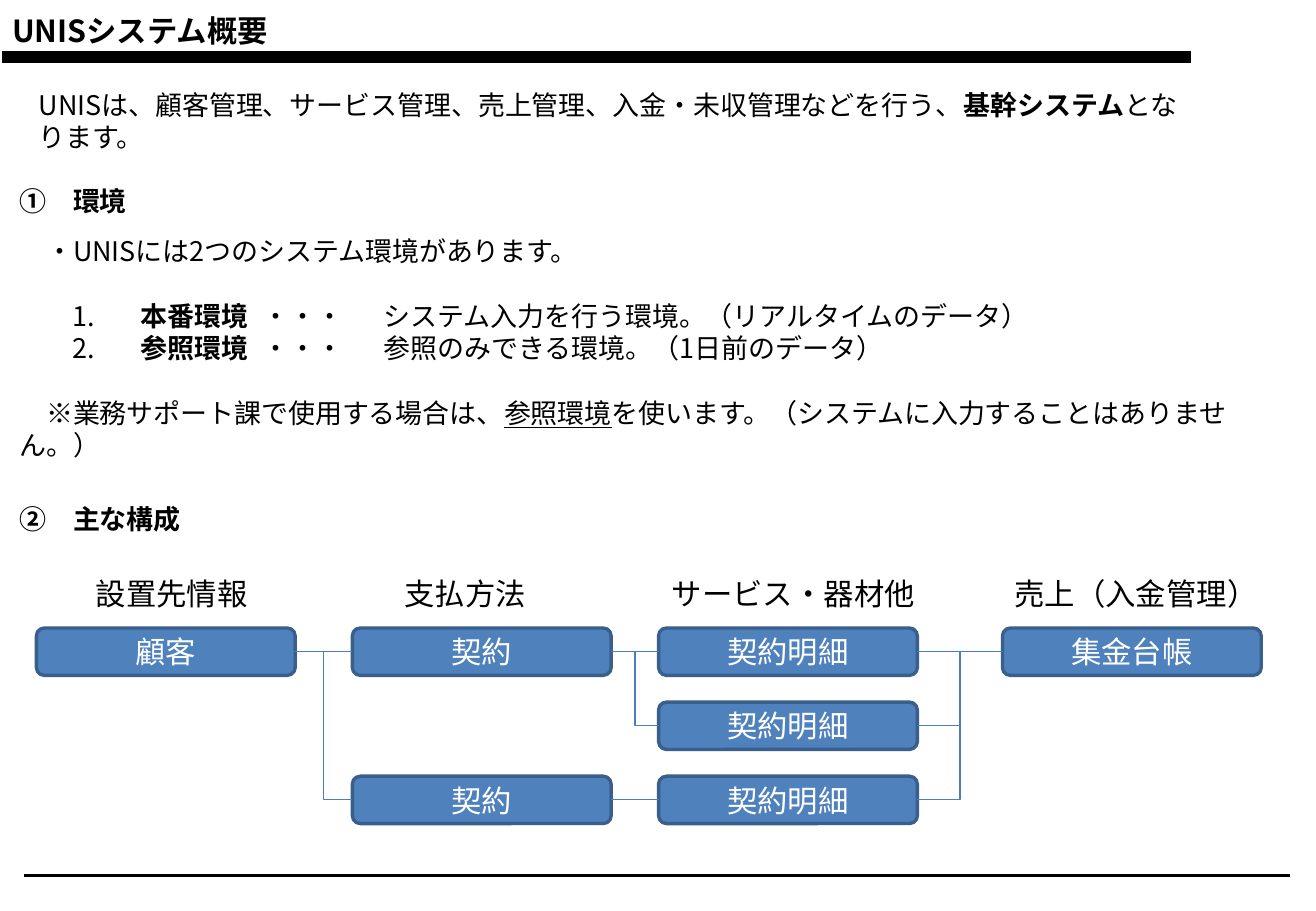
from lxml import etree
from pptx import Presentation
from pptx.dml.color import RGBColor
from pptx.enum.shapes import MSO_CONNECTOR as CONNECTOR, MSO_SHAPE as SHAPE
from pptx.enum.text import MSO_ANCHOR as ANCHOR, MSO_AUTO_SIZE as AUTO_SIZE, PP_ALIGN as ALIGN
from pptx.oxml.ns import qn
from pptx.util import Pt

COLORS = {"text": "000000", "white": "FFFFFF", "box": "4F81BD",
          "border": "3A5F8C", "link": "4B7EBC"}
SANS, LATIN = "Noto Sans CJK JP", "Calibri"
PX = 9144  # 100 px to the inch
BOLD, UNDERLINE = {"bold": True}, {"underline": True}

TITLE = "UNISシステム概要"
INTRO = [("UNISは、顧客管理、サービス管理、売上管理、入金・未収管理などを行う、", {}),
         ("基幹システム", BOLD), ("となります。", {})]
SECTIONS = [("①　環境", 147), ("②　主な構成", 409)]

# first-line indent in px, blank lines before, runs
ENVIRONMENT = [
    (22, 0, [("・UNISには2つのシステム環境があります。", {})]),
    (44, 1, [("1.\t", {}), ("本番環境", BOLD),
             ("\t・・・\tシステム入力を行う環境。（リアルタイムのデータ）", {})]),
    (44, 0, [("2.\t", {}), ("参照環境", BOLD),
             ("\t・・・\t参照のみできる環境。（1日前のデータ）", {})]),
    (22, 1, [("※業務サポート課で使用する場合は、", {}), ("参照環境", UNDERLINE),
             ("を使います。（システムに入力することはありません。）", {})]),
]
TAB_STOPS = [95, 228, 316]

# heading, heading left, boxes left, {row: box label}
COLUMNS = [
    ("設置先情報", 69, 30, {0: "顧客"}),
    ("支払方法", 323, 290, {0: "契約", 2: "契約"}),
    ("サービス・器材他", 543, 542, {0: "契約明細", 1: "契約明細", 2: "契約明細"}),
    ("売上（入金管理）", 825, 825, {0: "集金台帳"}),
]
# (column, row) of both ends
LINKS = [((0, 0), (1, 0)), ((0, 0), (1, 2)), ((1, 0), (2, 0)), ((1, 0), (2, 1)),
         ((1, 2), (2, 2)), ((2, 0), (3, 0)), ((2, 1), (3, 0)), ((2, 2), (3, 0))]
RULES = [(2, 980, 47, 6.7), (20, 1062, 721, 2)]  # left, right, top, weight

BOX_WIDTH, BOX_HEIGHT, FIRST_ROW, ROW_STEP = 213, 39, 517, 61


def rgb(name):
    return RGBColor.from_string(COLORS[name])


def px(*lengths):
    return [length * PX for length in lengths]


def write(paragraph, runs, size, color="text", font=SANS, align=ALIGN.LEFT, blank_lines=0):
    paragraph.alignment = align
    paragraph.line_spacing = Pt(size * 1.2)
    paragraph.space_before = Pt(size * 1.2 * blank_lines)
    for text, style in runs:
        run = paragraph.add_run()
        run.text = text
        values = {"name": font, "size": Pt(size), "bold": False, **style}
        for name, value in values.items():
            setattr(run.font, name, value)
        run.font.color.rgb = rgb(color)
        latin = run.font._element.find(qn("a:latin"))
        east_asian = etree.Element(qn("a:ea"), typeface=SANS)
        latin.addnext(east_asian)


def add_text(left, top, width, height, runs, size, wrap=True):
    frame = slide.shapes.add_textbox(*px(left, top, width, height)).text_frame
    frame.word_wrap = wrap
    write(frame.paragraphs[0], runs, size)


def place(placeholder, left, top, width, height, anchor):
    values = dict(zip(("left", "top", "width", "height"), px(left, top, width, height)))
    for name, value in values.items():
        setattr(placeholder, name, value)
    frame = placeholder.text_frame
    frame.auto_size = AUTO_SIZE.NONE
    frame.vertical_anchor = anchor
    return frame


def set_indent_and_tabs(paragraph, indent):
    """Remove the bullet, indent the first line only and add the tab stops."""
    properties = paragraph._p.get_or_add_pPr()
    properties.set("marL", "0")
    properties.set("indent", str(indent * PX))
    etree.SubElement(properties, qn("a:buNone"))
    tabs = etree.SubElement(properties, qn("a:tabLst"))
    for stop in TAB_STOPS:
        etree.SubElement(tabs, qn("a:tab"), pos=str(stop * PX), algn="l")


def add_line(kind, points, color, weight):
    line = slide.shapes.add_connector(kind, *px(*points))
    line.line.color.rgb = rgb(color)
    line.line.width = Pt(weight)
    etree.SubElement(line._element.spPr, qn("a:effectLst"))
    return line


def add_box(left, top, label):
    box = slide.shapes.add_shape(SHAPE.ROUNDED_RECTANGLE, *px(left, top, BOX_WIDTH, BOX_HEIGHT))
    box.shadow.inherit = False
    box.fill.solid()
    box.fill.fore_color.rgb = rgb("box")
    box.line.color.rgb = rgb("border")
    box.line.width = Pt(2)
    box.text_frame.vertical_anchor = ANCHOR.MIDDLE
    write(box.text_frame.paragraphs[0], [(label, {})], 18, "white", LATIN, ALIGN.CENTER)
    return box


presentation = Presentation()
presentation.slide_width, presentation.slide_height = px(1083, 750)
slide = presentation.slides.add_slide(presentation.slide_layouts[1])

for left, right, top, weight in RULES:
    add_line(CONNECTOR.STRAIGHT, (left, top, right, top), "text", weight)

title = place(slide.shapes.title, 0, 1, 768, 48, ANCHOR.MIDDLE)
write(title.paragraphs[0], [(TITLE, BOLD)], 18)
add_text(22, 68, 976, 37, INTRO, 16)
for heading, top in SECTIONS:
    add_text(6, top, 1071, 37, [(heading, BOLD)], 16)

body = place(slide.placeholders[1], 6, 188, 1071, 172, ANCHOR.TOP)
for index, (indent, blank_lines, runs) in enumerate(ENVIRONMENT):
    paragraph = body.add_paragraph() if index else body.paragraphs[0]
    set_indent_and_tabs(paragraph, indent)
    write(paragraph, runs, 16, blank_lines=blank_lines)

boxes = {}
for column, (heading, heading_left, left, labels) in enumerate(COLUMNS):
    add_text(heading_left, 469, len(heading) * 25 + 21, 40, [(heading, {})], 18, wrap=False)
    for row, label in labels.items():
        boxes[column, row] = add_box(left, FIRST_ROW + row * ROW_STEP, label)

for start, end in LINKS:
    kind = CONNECTOR.STRAIGHT if start[1] == end[1] else CONNECTOR.ELBOW
    link = add_line(kind, (0, 0, 0, 0), "link", 0.75)
    link.begin_connect(boxes[start], 3)
    link.end_connect(boxes[end], 1)

presentation.save("out.pptx")
